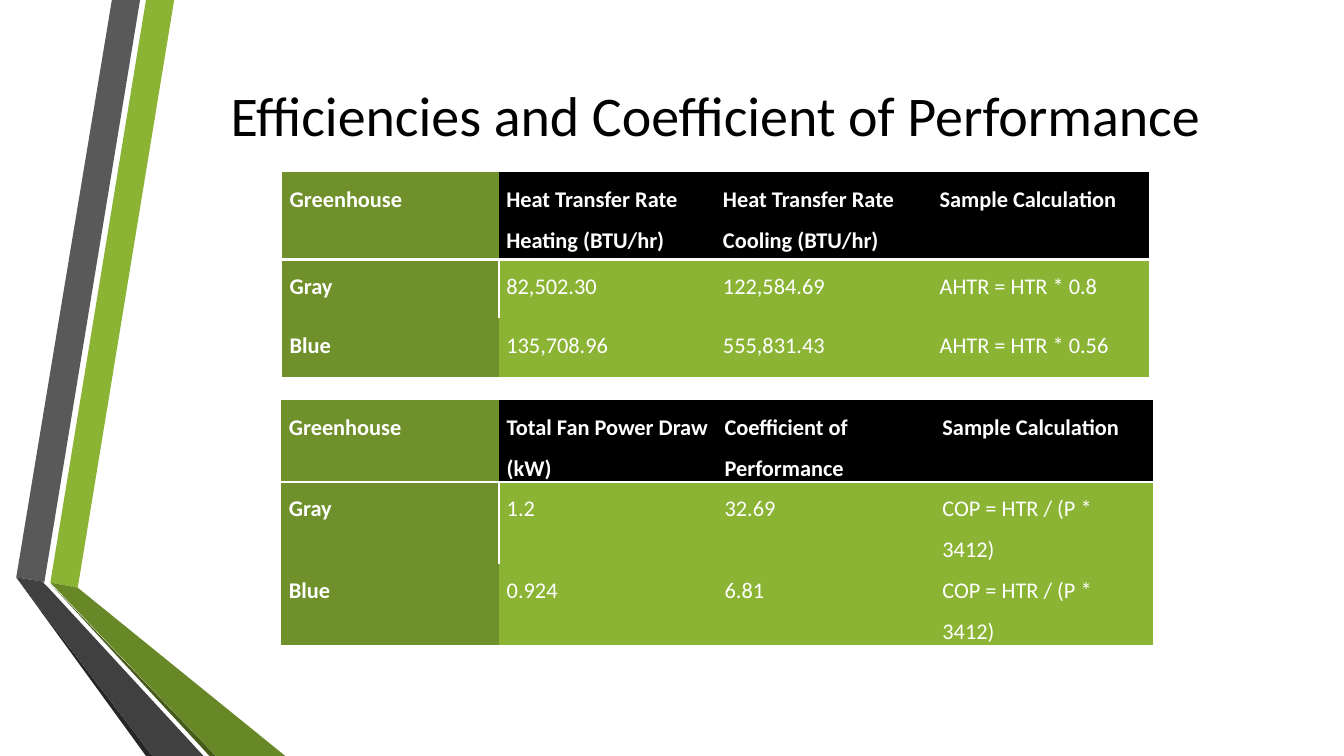
import pptx
import pptx.dml.color
import pptx.enum.text
import pptx.oxml.ns
import pptx.util
from lxml import etree

Cm = pptx.util.Cm
Pt = pptx.util.Pt
qn = pptx.oxml.ns.qn
RGB = pptx.dml.color.RGBColor.from_string
ALIGN = pptx.enum.text.PP_ALIGN

HUES = {
    "white": "FFFFFF", "black": "000000",
    "green": "8BB434", "leaf": "6F902A", "moss": "688727", "olive": "465A1A",
    "gray": "595959", "slate": "404040", "coal": "262626",
}
PLAIN = "{2D5ABB26-0587-4C30-8999-92F81FD0307C}"  # no style, no grid


def write(frame, text, size=16, hue="white", bold=False, align=ALIGN.LEFT, space=1.0):
    para = frame.paragraphs[0]
    para.alignment = align
    para.line_spacing = space
    run = para.add_run()
    run.text = text
    font = run.font
    font.name, font.size, font.bold = "Calibri", Pt(size), bold
    font.color.rgb = RGB(HUES[hue])


def edge(cell, side):
    """Draw a white 2 pt border on one side (R or B); call before the fill is set."""
    line = etree.SubElement(cell._tc.get_or_add_tcPr(), qn("a:ln" + side), w=str(Pt(2)))
    fill = etree.SubElement(line, qn("a:solidFill"))
    etree.SubElement(fill, qn("a:srgbClr"), val=HUES["white"])


deck = pptx.Presentation()
deck.slide_width, deck.slide_height = Cm(33.87), Cm(19.05)
slide = deck.slides.add_slide(deck.slide_layouts[6])
shapes = slide.shapes

# Folded ribbons on the left, back to front
ribbons = [
    ("green", [(1.27, 14.68), (1.96, 14.81), (4.39, 0), (3.68, 0)]),
    ("gray", [(3.53, 0), (2.82, 0), (0.41, 14.55), (1.12, 14.66)]),
    ("coal", [(0.41, 14.55), (3.68, 19.05), (3.84, 19.05)]),
    ("olive", [(1.27, 14.71), (5.28, 19.05), (5.44, 19.05)]),
    ("moss", [(1.27, 14.68), (5.44, 19.05), (7.19, 19.05), (1.96, 14.81)]),
    ("slate", [(5.13, 19.05), (1.22, 14.81), (1.09, 14.68), (1.12, 14.66),
               (0.41, 14.55), (3.84, 19.05)]),
]
for hue, spots in ribbons:
    spots = [(Cm(x), Cm(y)) for x, y in spots]
    pen = shapes.build_freeform(*spots[0])
    pen.add_line_segments(spots[1:], close=True)
    band = pen.convert_to_shape()
    band.shadow.inherit = False
    band.fill.solid()
    band.fill.fore_color.rgb = RGB(HUES[hue])
    band.line.fill.background()

title = shapes.add_textbox(Cm(4.11), Cm(1.9), Cm(27.84), Cm(4.88)).text_frame
title.word_wrap = True
write(title, "Efficiencies and Coefficient of Performance",
      size=40, hue="black", align=ALIGN.CENTER)

# Left, top, column width, row heights, rows
tables = [
    (7.11, 4.34, 5.46, [2.2, 1.48, 1.48], [
        ["Greenhouse", "Heat Transfer Rate Heating (BTU/hr)",
         "Heat Transfer Rate Cooling (BTU/hr)", "Sample Calculation"],
        ["Gray", "82,502.30", "122,584.69", "AHTR = HTR * 0.8"],
        ["Blue", "135,708.96", "555,831.43", "AHTR = HTR * 0.56"],
    ]),
    (7.09, 10.08, 5.49, [2.06, 2.06, 2.06], [
        ["Greenhouse", "Total Fan Power Draw (kW)",
         "Coefficient of Performance", "Sample Calculation"],
        ["Gray", "1.2", "32.69", "COP = HTR / (P * 3412)"],
        ["Blue", "0.924", "6.81", "COP = HTR / (P * 3412)"],
    ]),
]
for left, top, width, highs, rows in tables:
    count = len(rows[0])
    frame = shapes.add_table(len(rows), count, Cm(left), Cm(top),
                             Cm(width * count), Cm(sum(highs)))
    grid = frame.table
    for style in grid._tbl.iter(qn("a:tableStyleId")):
        style.text = PLAIN
    for col in grid.columns:
        col.width = Cm(width)
    for r, (high, row) in enumerate(zip(highs, rows)):
        grid.rows[r].height = Cm(high)
        for c, text in enumerate(row):
            cell = grid.cell(r, c)
            cell.margin_left = cell.margin_right = Cm(0.19)
            cell.margin_top = cell.margin_bottom = 0
            write(cell.text_frame, text, bold=r == 0 or c == 0, space=1.5)
            if r == 1 and c == 0:
                edge(cell, "R")
            if r == 0:
                edge(cell, "B")
            hue = "leaf" if c == 0 else "black" if r == 0 else "green"
            cell.fill.solid()
            cell.fill.fore_color.rgb = RGB(HUES[hue])

deck.save("out.pptx")
